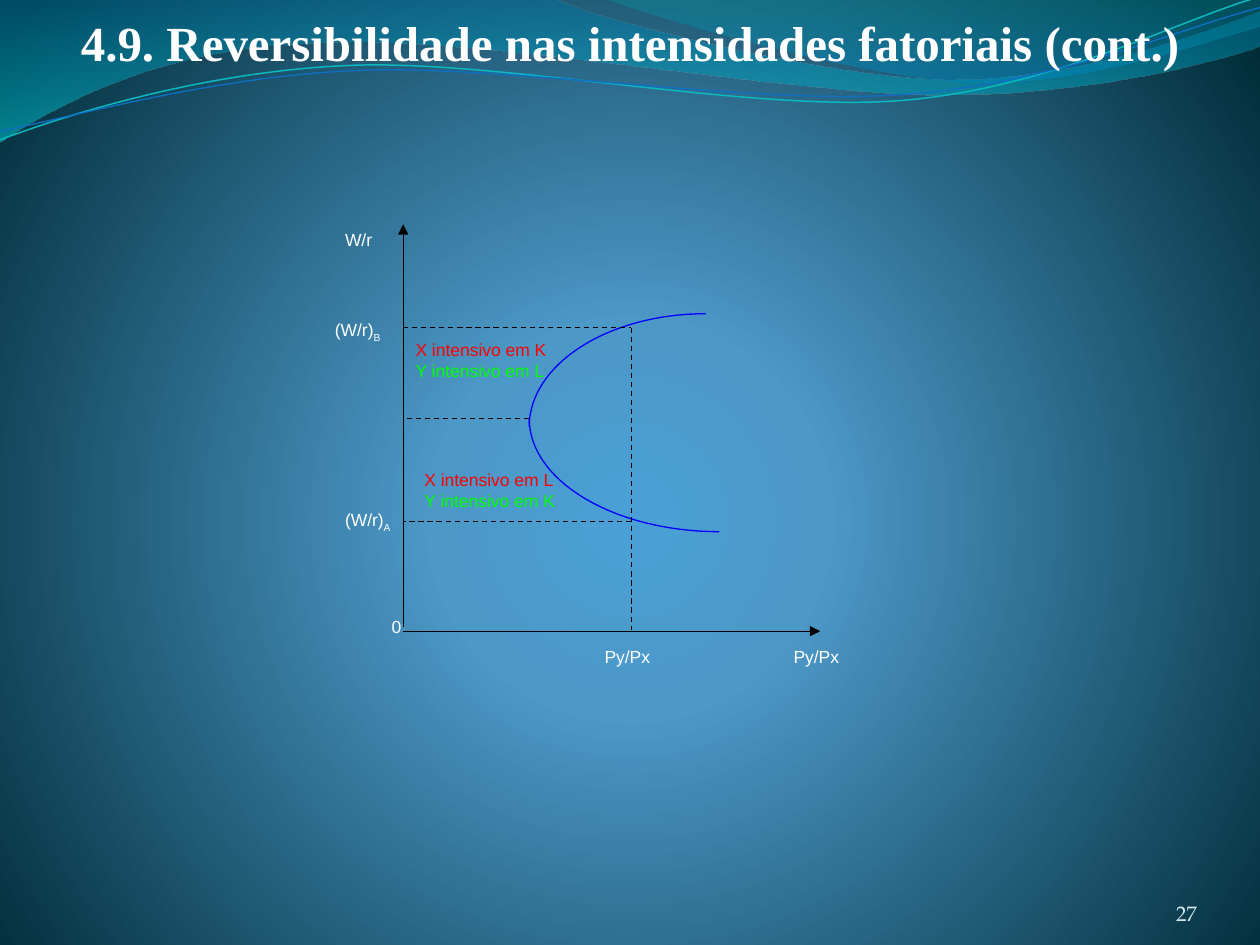
import dataclasses

import lxml.etree
import pptx
import pptx.dml.color
import pptx.enum.dml
import pptx.enum.shapes
import pptx.enum.text
import pptx.oxml.ns
import pptx.util

Inches = pptx.util.Inches
Align = pptx.enum.text.PP_ALIGN
Anchor = pptx.enum.text.MSO_ANCHOR
qn = pptx.oxml.ns.qn


@dataclasses.dataclass(frozen=True)
class Theme:
    white: str = "FFFFFF"
    number: str = "D1EAEE"
    black: str = "000000"
    curve: str = "0000FF"
    product_x: str = "FF0000"
    product_y: str = "00FF00"
    teal_line: str = "0AB8BF"
    blue_line: str = "0F6FC6"
    # Gradient stops: position %, colour, opacity %
    backdrop: tuple = ((0, "4AA0D6", 100), (25, "4C98C7", 100), (100, "002C38", 100))
    wide_wave: tuple = ((0, "0074A1", 45), (100, "00C6CF", 55))
    short_wave: tuple = ((0, "00A1A9", 30), (80, "008BBF", 45))
    title_font: str = "Times New Roman"
    label_font: str = "Arial"
    number_font: str = "TeX Gyre Pagella"
    title_size: float = 28
    number_size: float = 12
    label_size: float = 10
    line_width: float = 0.75


THEME = Theme()


def rgb(colour):
    return pptx.dml.color.RGBColor.from_string(colour)


def child(parent, tag, **attributes):
    return lxml.etree.SubElement(parent, qn(tag), **attributes)


def set_gradient(fill, owner, stops, circular=False):
    """Give a fill the stops, running downwards or out from a centre."""
    fill.gradient()
    gradient = next(owner.iter(qn("a:gradFill")))
    for part in list(gradient):
        gradient.remove(part)
    stop_list = child(gradient, "a:gsLst")
    for position, colour, opacity in stops:
        stop = child(stop_list, "a:gs", pos=str(position * 1000))
        shade = child(stop, "a:srgbClr", val=colour)
        if opacity < 100:
            child(shade, "a:alpha", val=str(opacity * 1000))
    if circular:
        circle = child(gradient, "a:path", path="circle")
        child(circle, "a:fillToRect", l="10000", t="110000", r="10000", b="100000")
    else:
        child(gradient, "a:lin", ang="5400000", scaled="1")


def add_outline(page, left, top, start, segments, close=False):
    """Each segment holds one point for a line or three for a cubic curve."""
    spots = [(Inches(left + x), Inches(top + y))
             for x, y in [start] + [point for segment in segments for point in segment]]
    builder = page.shapes.build_freeform(*spots[0])
    builder.add_line_segments(spots[1:], close=close)
    shape = builder.convert_to_shape()
    shape.shadow.inherit = False
    # Join the steps of each curve into one
    steps = iter(list(shape.element.iter(qn("a:lnTo"))))
    for segment in segments:
        parts = [next(steps) for _ in segment]
        if len(parts) == 3:
            outline = parts[0].getparent()
            curve = child(outline, "a:cubicBezTo")
            parts[0].addprevious(curve)
            for part in parts:
                curve.append(part[0])
                outline.remove(part)
    return shape


def add_curve(page, left, top, start, segments, colour, width=THEME.line_width):
    shape = add_outline(page, left, top, start, segments)
    shape.fill.background()
    shape.line.color.rgb = rgb(colour)
    shape.line.width = pptx.util.Pt(width)


def add_band(page, left, top, start, segments, stops):
    shape = add_outline(page, left, top, start, segments, close=True)
    set_gradient(shape.fill, shape.element, stops)
    shape.line.fill.background()


def add_line(page, left, top, ends, dashed=False, arrow=False):
    x1, y1, x2, y2 = ends
    line = page.shapes.add_connector(
        pptx.enum.shapes.MSO_CONNECTOR.STRAIGHT,
        Inches(left + x1), Inches(top + y1), Inches(left + x2), Inches(top + y2))
    line.line.color.rgb = rgb(THEME.black)
    line.line.width = pptx.util.Pt(THEME.line_width)
    if dashed:
        line.line.dash_style = pptx.enum.dml.MSO_LINE.DASH
    if arrow:
        child(line.element.spPr.find(qn("a:ln")), "a:tailEnd", type="triangle")
    child(line.element.spPr, "a:effectLst")


def add_text(page, left, top, width, height, rows, font=THEME.label_font,
             size=THEME.label_size, align=Align.LEFT, bold=False):
    """Each row is a text, its colour and an optional subscript."""
    box = page.shapes.add_textbox(Inches(left), Inches(top), Inches(width), Inches(height))
    frame = box.text_frame
    frame.word_wrap = True
    for index, (text, colour, subscript) in enumerate(rows):
        para = frame.add_paragraph() if index else frame.paragraphs[0]
        para.alignment = align
        for part in filter(None, (text, subscript)):
            span = para.add_run()
            span.text = part
            span.font.name = font
            span.font.size = pptx.util.Pt(size)
            span.font.bold = bold
            span.font.color.rgb = rgb(colour)
        if subscript:
            span.font._element.set("baseline", "-30000")
    return frame


def draw_waves(page, left, top):
    # Translucent bands
    add_band(page, left, top, (0, 0), [
        [(4.4, -0.01)],
        [(4.76, 0.17), (6.64, 0.63), (7.58, 0.63)],
        [(8.53, 0.63), (9.58, 0.26), (10, 0.09)],
        [(10.01, 0.36)],
        [(9.83, 0.44), (8.7, 0.76), (7.46, 0.75)],
        [(6.22, 0.75), (3.82, 0.28), (2.57, 0.34)],
        [(1.29, 0.36), (0.46, 0.83), (-0.01, 1.13)]], THEME.wide_wave)
    add_band(page, left, top, (4.79, -0.01), [
        [(5.09, 0.11), (6.82, 0.62), (7.69, 0.65)],
        [(8.56, 0.69), (9.61, 0.32), (10, 0.21)],
        [(10, 0)]], THEME.short_wave)
    # Thin lines
    add_curve(page, left, top, (0, 1.11), [
        [(0.48, 0.93), (1.58, 0.57), (2.77, 0.52)],
        [(3.95, 0.47), (5.93, 0.89), (7.13, 0.8)],
        [(8.33, 0.71), (9.38, 0.15), (9.98, -0.02)]], THEME.teal_line, 0.85)
    add_curve(page, left, top, (0, 1.04), [
        [(0.47, 0.96), (1.64, 0.61), (2.83, 0.56)],
        [(4.03, 0.51), (5.97, 0.84), (7.17, 0.75)],
        [(8.36, 0.67), (9.41, 0.21), (10, 0.06)]], THEME.blue_line)


def draw_diagram(page, left, top):
    axis_x, axis_y, price_x = 0.7, 3.26, 2.51
    wage_b, turn, wage_a = 0.85, 1.57, 2.39
    # Axes
    add_line(page, left, top, (axis_x, axis_y - 0.03, axis_x, 0.03), arrow=True)
    add_line(page, left, top, (axis_x, axis_y, 4.01, axis_y), arrow=True)
    # Curve halves
    add_curve(page, left, top, (3.21, 2.47), [[(2.38, 2.47), (1.7, 2.07), (1.7, turn)]],
              THEME.curve)
    add_curve(page, left, top, (3.1, 0.74), [[(2.33, 0.74), (1.7, 1.14), (1.7, 1.64)]],
              THEME.curve)
    # Guides
    for ends in ((axis_x, wage_b, price_x, wage_b), (price_x, wage_b, price_x, axis_y - 0.01),
                 (price_x, wage_a, axis_x, wage_a), (1.7, turn, axis_x, turn)):
        add_line(page, left, top, ends, dashed=True)
    # Axis labels
    for x, y, text, subscript in ((3.7, 3.33, "Py/Px", ""), (0.51, 3.09, "0", ""),
                                  (2.2, 3.33, "Py/Px", ""), (0.14, 2.24, "(W/r)", "A"),
                                  (0.06, 0.73, "(W/r)", "B"), (0.14, 0.02, "W/r", "")):
        add_text(page, left + x, top + y, 1, 0.4, [(text, THEME.white, subscript)])
    # Factor intensities
    for x, y, factor_x, factor_y in ((0.77, 1.92, "L", "K"), (0.7, 0.89, "K", "L")):
        add_text(page, left + x, top + y, 1.6, 0.4,
                 [(f"X intensivo em {factor_x}", THEME.product_x, ""),
                  (f"Y intensivo em {factor_y}", THEME.product_y, "")])


def draw_number(page, left, top, width, height):
    frame = add_text(page, left, top, width, height, [("27", THEME.number, "")],
                     THEME.number_font, THEME.number_size, Align.RIGHT)
    frame.vertical_anchor = Anchor.BOTTOM
    frame.margin_left = frame.margin_right = frame.margin_top = frame.margin_bottom = 0


def main():
    deck = pptx.Presentation()
    deck.slide_width, deck.slide_height = Inches(10), Inches(7.5)
    page = deck.slides.add_slide(deck.slide_layouts[6])
    set_gradient(page.background.fill, page.element, THEME.backdrop, circular=True)
    draw_waves(page, 0, 0)
    add_text(page, 0, 0.05, 10, 0.57,
             [("4.9. Reversibilidade nas intensidades fatoriais (cont.)", THEME.white, "")],
             THEME.title_font, THEME.title_size, Align.CENTER, bold=True)
    draw_number(page, 8.67, 6.95, 0.83, 0.4)
    draw_diagram(page, 2.5, 1.75)
    deck.save("out.pptx")


if __name__ == "__main__":
    main()
